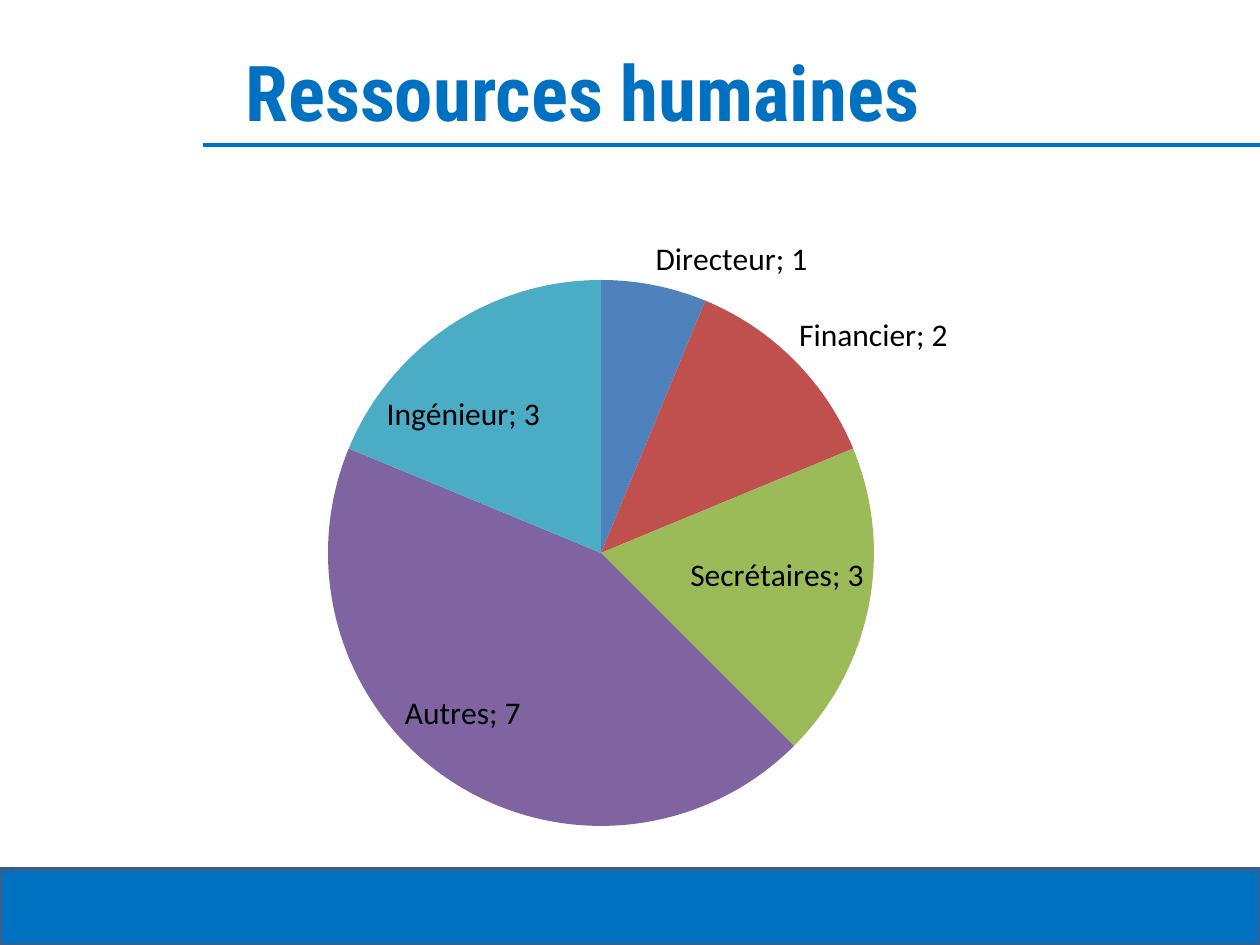
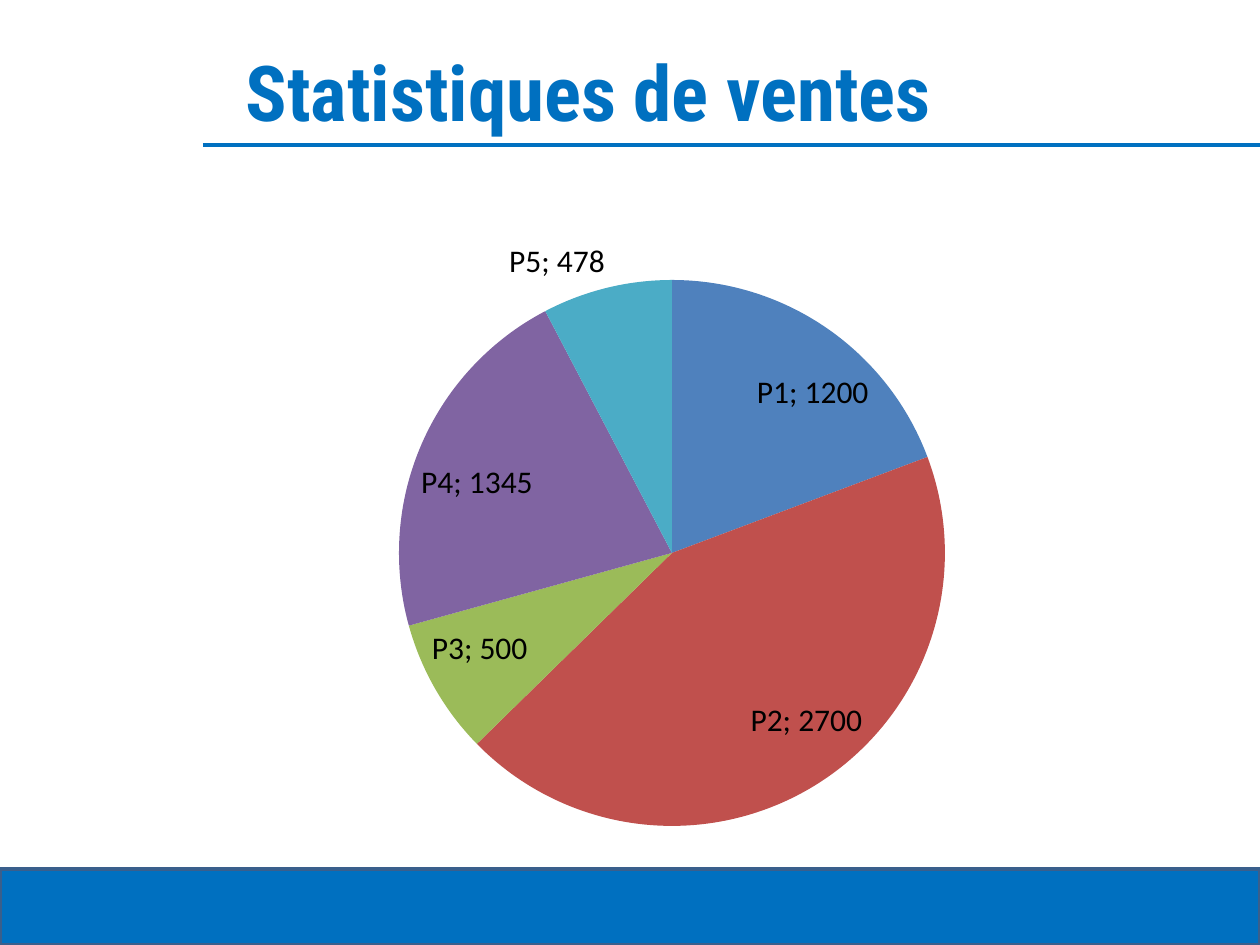
import pptx
import pptx.chart.data
import pptx.dml.color
import pptx.enum.chart
import pptx.enum.shapes
import pptx.enum.text
import pptx.oxml
import pptx.oxml.ns
import pptx.util

SLIDE_W, SLIDE_H = 1260, 945
BLUE, BAND_EDGE, BLACK = "0070C0", "3A5F8C", "000000"
SLICES = ["4F81BD", "C0504D", "9BBB59", "8064A2", "4BACC6"]
TITLE_FONT, LABEL_FONT = "Roboto Condensed", "Calibri"

TITLE_BOX = (233, 26, 964, 129)
RULE_BOX = (203, 145, 1057, 0)
BAND_BOX = (0, 869, 1260, 76)
CHART_BOX = (63, 221, 1134, 624)
PIE_TOP, PIE_SIZE = 59, 546

STAFF = {"Directeur": 1, "Financier": 2, "Secrétaires": 3, "Autres": 7, "Ingénieur": 3}
SALES = {"P1": 1200, "P2": 2700, "P3": 500, "P4": 1345, "P5": 478}


def px(length):
    return pptx.util.Emu(round(length * 914400 / 126))


def place(box):
    return [px(length) for length in box]


def rgb(colour):
    return pptx.dml.color.RGBColor.from_string(colour)


def style_font(font, name, size, colour, bold=False):
    font.name = name
    font.size = pptx.util.Pt(size)
    font.bold = bold
    font.color.rgb = rgb(colour)


def add_band(slide, box):
    band = slide.shapes.add_shape(pptx.enum.shapes.MSO_SHAPE.RECTANGLE, *place(box))
    band.shadow.inherit = False
    band.fill.solid()
    band.fill.fore_color.rgb = rgb(BLUE)
    band.line.color.rgb = rgb(BAND_EDGE)
    band.line.width = pptx.util.Pt(2)


def add_rule(slide, box):
    left, top, width, height = box
    rule = slide.shapes.add_connector(
        pptx.enum.shapes.MSO_CONNECTOR.STRAIGHT,
        *place((left, top, left + width, top + height)),
    )
    rule.line.color.rgb = rgb(BLUE)
    rule.line.width = pptx.util.Pt(2.25)
    properties = rule._element.spPr
    properties.append(properties.makeelement(pptx.oxml.ns.qn("a:effectLst"), {}))


def fill_title(slide, box, wording):
    title = slide.shapes.title
    title.left, title.top, title.width, title.height = place(box)
    frame = title.text_frame
    frame.word_wrap = True
    frame.vertical_anchor = pptx.enum.text.MSO_ANCHOR.MIDDLE
    heading = frame.paragraphs[0]
    heading.alignment = pptx.enum.text.PP_ALIGN.LEFT
    run = heading.add_run()
    run.text = wording
    style_font(run.font, TITLE_FONT, 44, BLUE, bold=True)


def set_pie_area(chart, box, pie_left):
    width, height = box[2:]
    fractions = {
        "x": pie_left / width,
        "y": PIE_TOP / height,
        "w": PIE_SIZE / width,
        "h": PIE_SIZE / height,
    }
    sizes = "".join(f'<c:{key} val="{value:.4f}"/>' for key, value in fractions.items())
    layout = pptx.oxml.parse_xml(
        f'<c:layout {pptx.oxml.ns.nsdecls("c")}><c:manualLayout>'
        '<c:layoutTarget val="inner"/><c:xMode val="edge"/><c:yMode val="edge"/>'
        f"{sizes}</c:manualLayout></c:layout>"
    )
    plot_area = chart._chartSpace.chart.plotArea
    for automatic in plot_area.findall(pptx.oxml.ns.qn("c:layout")):
        plot_area.remove(automatic)
    plot_area.insert(0, layout)


def add_pie(slide, box, counts, pie_left):
    data = pptx.chart.data.CategoryChartData()
    data.categories = list(counts)
    data.add_series("Series 1", list(counts.values()))
    chart = slide.shapes.add_chart(
        pptx.enum.chart.XL_CHART_TYPE.PIE, *place(box), data
    ).chart
    chart.has_title = False
    chart.has_legend = False
    style_font(chart.font, LABEL_FONT, 18, BLACK)
    set_pie_area(chart, box, pie_left)

    plot = chart.plots[0]
    plot.vary_by_categories = True
    for index, colour in enumerate(SLICES):
        fill = plot.series[0].points[index].format.fill
        fill.solid()
        fill.fore_color.rgb = rgb(colour)

    plot.has_data_labels = True
    labels = plot.data_labels
    labels.show_value = True
    labels.show_category_name = True
    labels.show_percentage = False
    labels.position = pptx.enum.chart.XL_LABEL_POSITION.BEST_FIT
    style_font(labels.font, LABEL_FONT, 18, BLACK)
    separator = pptx.oxml.parse_xml(
        f'<c:separator {pptx.oxml.ns.nsdecls("c")}>; </c:separator>'
    )
    labels._element.find(pptx.oxml.ns.qn("c:showBubbleSize")).addnext(separator)


def add_pie_slide(deck, wording, counts, pie_left):
    slide = deck.slides.add_slide(deck.slide_layouts.get_by_name("Title Only"))
    add_band(slide, BAND_BOX)
    add_rule(slide, RULE_BOX)
    fill_title(slide, TITLE_BOX, wording)
    add_pie(slide, CHART_BOX, counts, pie_left)


def main():
    deck = pptx.Presentation()
    deck.slide_width, deck.slide_height = px(SLIDE_W), px(SLIDE_H)
    add_pie_slide(deck, "Ressources humaines", STAFF, 265)
    add_pie_slide(deck, "Statistiques de ventes", SALES, 336)
    deck.save("out.pptx")


if __name__ == "__main__":
    main()
